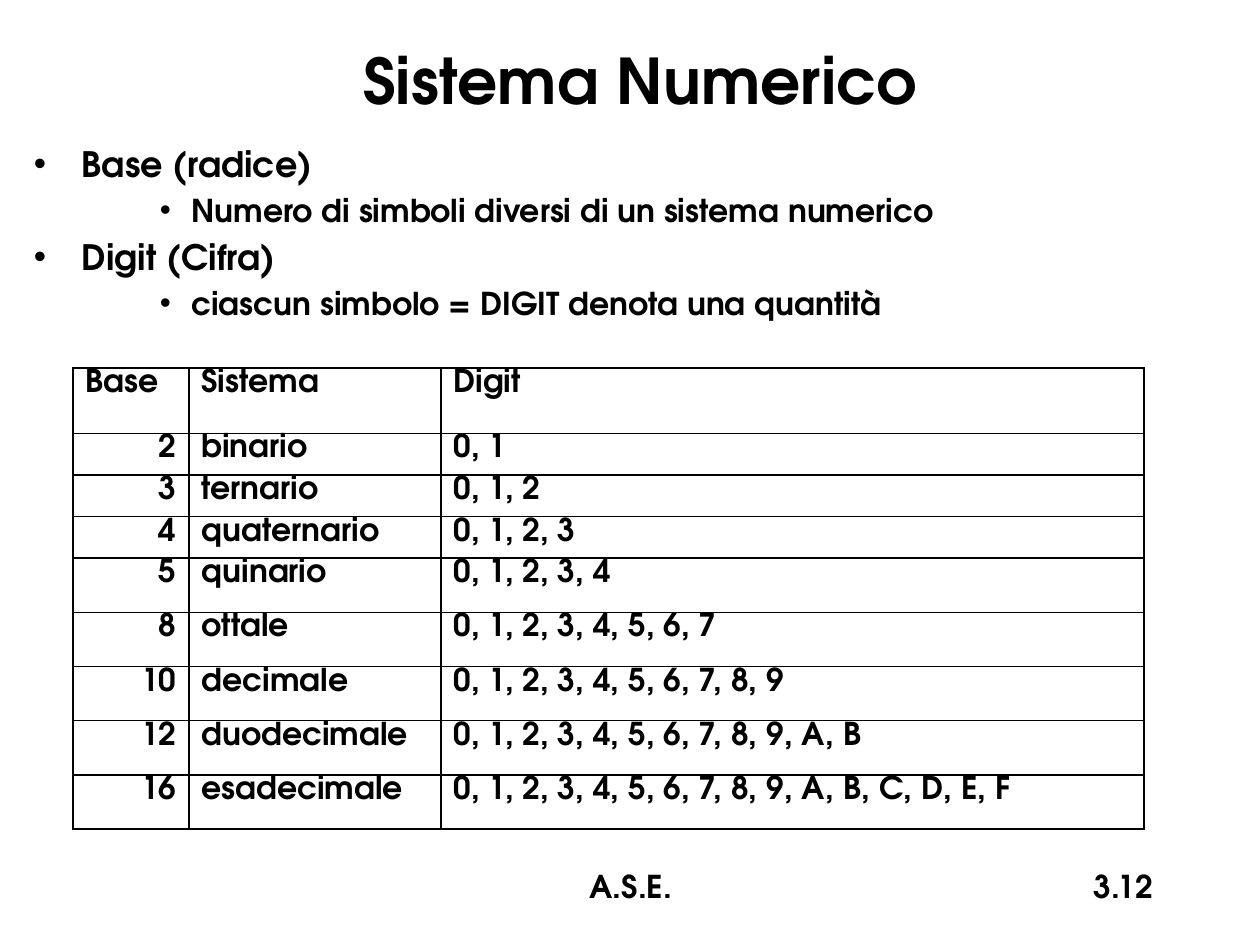
from dataclasses import dataclass

from lxml.etree import SubElement
from pptx import Presentation
from pptx.dml.color import RGBColor
from pptx.enum.text import MSO_ANCHOR, PP_ALIGN
from pptx.oxml.ns import qn
from pptx.util import Inches, Pt


@dataclass(frozen=True)
class Theme:
    font: str = "TeX Gyre Adventor"
    ink: str = "000000"
    head: int = 36
    main: int = 20
    small: int = 18
    rule: int = 1


THEME = Theme()
SYMBOLS = "0123456789ABCDEF"
SYSTEMS = [
    (2, "binario"), (3, "ternario"), (4, "quaternario"),
    (5, "quinario"), (8, "ottale"), (10, "decimale"),
    (12, "duodecimale"), (16, "esadecimale"),
]
POINTS = [
    (0, "Base (radice)"),
    (2, "Numero di simboli diversi di un sistema numerico"),
    (0, "Digit (Cifra)"),
    (2, "ciascun simbolo = DIGIT denota una quantità"),
]
# level: (type size, left margin, hanging indent)
LEVELS = {0: (THEME.main, 0.38, -0.38), 2: (THEME.small, 1.25, -0.25)}
COLS = [0.92, 2, 5.58]
ROWS = [0.52] + [0.33] * 3 + [0.43] * 5


def write(para, text, size, align=PP_ALIGN.LEFT):
    para.text = text
    para.alignment = align
    for run in para.runs:
        font = run.font
        font.name, font.size, font.bold = THEME.font, Pt(size), True
        font.color.rgb = RGBColor.from_string(THEME.ink)


def add_text(slide, box):
    frame = slide.shapes.add_textbox(*map(Inches, box)).text_frame
    frame.word_wrap = True
    return frame


def add_title(slide, box, text):
    title = slide.shapes.title
    title.left, title.top, title.width, title.height = map(Inches, box)
    frame = title.text_frame
    frame.vertical_anchor = MSO_ANCHOR.MIDDLE
    write(frame.paragraphs[0], text, THEME.head, PP_ALIGN.CENTER)


def add_points(slide, box):
    frame = add_text(slide, box)
    for i, (level, text) in enumerate(POINTS):
        para = frame.add_paragraph() if i else frame.paragraphs[0]
        size, left, hang = LEVELS[level]
        write(para, text, size)
        para.level = level
        para.space_before = Pt(size * 0.2)
        props = para._p.get_or_add_pPr()
        props.set("marL", str(Inches(left)))
        props.set("indent", str(Inches(hang)))
        SubElement(props, qn("a:buFont"), typeface="Arial")
        SubElement(props, qn("a:buChar"), char="•")


def add_rules(cell):
    """Draw a line on all four sides of the cell."""
    props = cell._tc.get_or_add_tcPr()
    for i, side in enumerate(("lnL", "lnR", "lnT", "lnB")):
        line = SubElement(props, qn("a:" + side), w=str(Pt(THEME.rule)))
        fill = SubElement(line, qn("a:solidFill"))
        SubElement(fill, qn("a:srgbClr"), val=THEME.ink)
        props.insert(i, line)


def add_grid(slide, box):
    data = [("Base", "Sistema", "Digit")]
    data += [(str(base), name, ", ".join(SYMBOLS[:base]))
             for base, name in SYSTEMS]
    table = slide.shapes.add_table(
        len(ROWS), len(COLS), *map(Inches, box)).table
    table.first_row = table.horz_banding = False
    for col, width in zip(table.columns, COLS):
        col.width = Inches(width)
    for r, (row, height) in enumerate(zip(table.rows, ROWS)):
        row.height = Inches(height)
        for c, cell in enumerate(row.cells):
            cell.fill.background()
            cell.margin_top = cell.margin_bottom = Inches(0.01)
            align = PP_ALIGN.RIGHT if r and not c else PP_ALIGN.LEFT
            write(cell.text_frame.paragraphs[0], data[r][c],
                  THEME.small, align)
            add_rules(cell)


def add_foot(slide, box, text, align):
    write(add_text(slide, box).paragraphs[0], text, THEME.small, align)


def main():
    deck = Presentation()
    deck.slide_width, deck.slide_height = Inches(10), Inches(7.5)
    slide = deck.slides.add_slide(deck.slide_layouts.get_by_name("Title Only"))
    add_title(slide, (0.33, 0.17, 9.5, 0.92), "Sistema Numerico")
    add_points(slide, (0.17, 1.08, 9.67, 5.67))
    add_grid(slide, (0.58, 2.92, sum(COLS), sum(ROWS)))
    add_foot(slide, (3.42, 6.83, 3.17, 0.5), "A.S.E.", PP_ALIGN.CENTER)
    add_foot(slide, (7.17, 6.83, 2.08, 0.5), "3.12", PP_ALIGN.RIGHT)
    deck.save("out.pptx")


if __name__ == "__main__":
    main()
